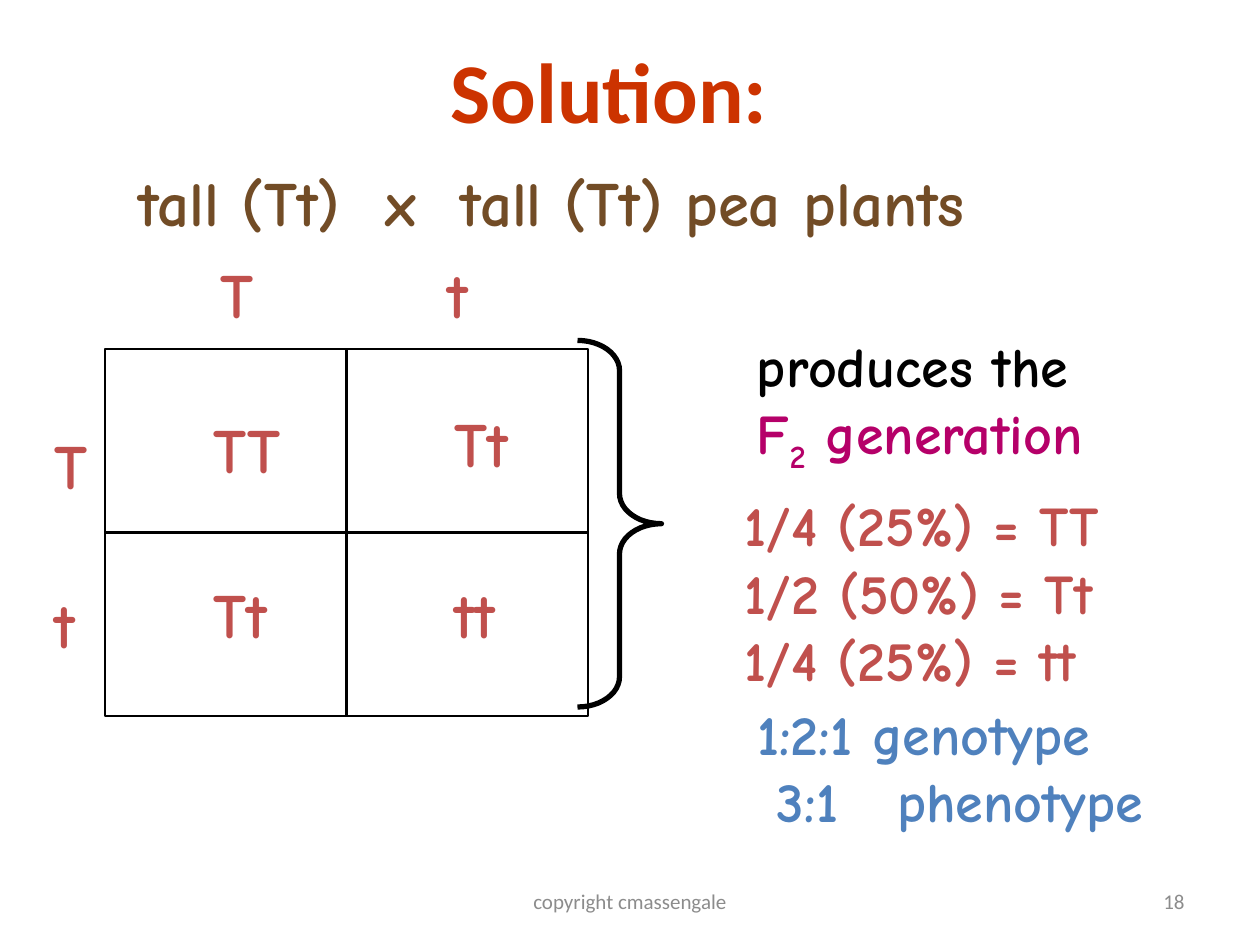
from lxml import etree
from pptx import Presentation
from pptx.dml.color import RGBColor
from pptx.enum.shapes import MSO_CONNECTOR, MSO_SHAPE
from pptx.enum.text import MSO_ANCHOR, PP_ALIGN
from pptx.oxml.ns import qn
from pptx.util import Pt

LEFT, CENTER, RIGHT = PP_ALIGN.LEFT, PP_ALIGN.CENTER, PP_ALIGN.RIGHT
TOP, MIDDLE = MSO_ANCHOR.TOP, MSO_ANCHOR.MIDDLE
STRAIGHT = MSO_CONNECTOR.STRAIGHT

BLACK = RGBColor(0x00, 0x00, 0x00)
GRAY = RGBColor(0x8C, 0x8C, 0x8C)
ORANGE = RGBColor(0xCC, 0x33, 0x00)
BROWN = RGBColor(0x72, 0x4C, 0x26)
RED = RGBColor(0xC0, 0x50, 0x4D)
MAGENTA = RGBColor(0xB5, 0x00, 0x69)
BLUE = RGBColor(0x4F, 0x81, 0xBD)

TITLE = {"name": "Calibri", "size": Pt(48.6), "bold": True}
FOOTER = {"name": "Calibri", "size": Pt(12), "bold": False}
GENE = {"name": "Comic Neue", "size": Pt(36), "bold": True}
RESULT = {"name": "Comic Neue", "size": Pt(32), "bold": True}

# Left, top, width, height of the Punnett square and the brace beside it
SQUARE = (60, 199.5, 276, 209.5)
BRACE = (330, 194.5, 48, 209.5)
PHENOTYPE_TAB = 80

# Text, left, top, width of each allele and offspring label
LABELS = [
    ("TT", 115, 231, 64), ("Tt", 115, 325.5, 56),
    ("Tt", 252.5, 227.5, 56), ("tt", 252.5, 325.5, 48),
    ("T", 24, 240, 39.5), ("t", 24, 331, 31),
    ("T", 119, 142.5, 39.5), ("t", 248.5, 142.5, 31),
]
LABEL_HEIGHT = 50.5

# Box and lines; a line is a list of (text, colour, baseline) runs
RESULTS = [
    ((425.5, 186, 221, 83.5), [
        [("produces the", BLACK, 0)],
        [("F", MAGENTA, 0), ("2", MAGENTA, -25000),
         (" generation", MAGENTA, 0)]]),
    ((418.5, 277, 264, 122.5), [
        [("1/4 (25%) = TT", RED, 0)],
        [("1/2 (50%) = Tt", RED, 0)],
        [("1/4 (25%) = tt", RED, 0)]]),
    ((425.5, 396, 278, 83.5), [
        [("1:2:1 genotype", BLUE, 0)],
        [(" 3:1\tphenotype", BLUE, 0)]]),
]

# Text, box, format, colour, alignment, anchor
HEADINGS = [
    ("Solution:", (0, 30, 696, 42), TITLE, ORANGE, CENTER, MIDDLE),
    ("tall (Tt)  x  tall (Tt) pea plants", (72, 90, 576, 50.5), GENE, BROWN,
     LEFT, TOP),
    ("copyright cmassengale", (246, 500.5, 228, 28.5), FOOTER, GRAY, CENTER,
     MIDDLE),
    ("18", (516, 500.5, 168, 28.5), FOOTER, GRAY, RIGHT, MIDDLE),
]


def add_text(s, box, lines, fmt, align=LEFT, anchor=TOP, wrap=False):
    tf = s.shapes.add_textbox(*map(Pt, box)).text_frame
    tf.word_wrap = wrap
    tf.vertical_anchor = anchor
    for i, runs in enumerate(lines):
        p = tf.paragraphs[0] if i == 0 else tf.add_paragraph()
        p.alignment = align
        for text, color, baseline in runs:
            r = p.add_run()
            r.text = text
            for key, value in fmt.items():
                setattr(r.font, key, value)
            r.font.color.rgb = color
            if baseline:
                r.font._element.set("baseline", str(baseline))
    return tf


def add_outline(s, kind, box, width):
    sp = s.shapes.add_shape(kind, *map(Pt, box))
    sp.shadow.inherit = False
    sp.fill.background()
    sp.line.color.rgb = BLACK
    sp.line.width = Pt(width)
    return sp


def add_divider(s, rect, begin, end):
    """Join two sides of the rectangle by their connection sites."""
    line = s.shapes.add_connector(STRAIGHT, 0, 0, 0, 0)
    line.begin_connect(rect, begin)
    line.end_connect(rect, end)
    line.line.color.rgb = BLACK
    line.line.width = Pt(2)
    etree.SubElement(line._element.spPr, qn("a:effectLst"))


def add_tab_stop(p, position):
    tabs = etree.SubElement(p._p.get_or_add_pPr(), qn("a:tabLst"))
    etree.SubElement(tabs, qn("a:tab"), pos=str(Pt(position)), algn="l")


def main():
    prs = Presentation()
    prs.slide_width, prs.slide_height = Pt(720), Pt(540)
    s = prs.slides.add_slide(prs.slide_layouts[6])

    for text, box, fmt, color, align, anchor in HEADINGS:
        add_text(s, box, [[(text, color, 0)]], fmt, align, anchor, wrap=True)

    square = add_outline(s, MSO_SHAPE.RECTANGLE, SQUARE, 1)
    add_divider(s, square, 3, 1)
    add_divider(s, square, 2, 0)
    for text, left, top, width in LABELS:
        add_text(s, (left, top, width, LABEL_HEIGHT), [[(text, RED, 0)]], GENE)

    for box, lines in RESULTS:
        tf = add_text(s, box, lines, RESULT)
    add_tab_stop(tf.paragraphs[-1], PHENOTYPE_TAB)
    brace = add_outline(s, MSO_SHAPE.RIGHT_BRACE, BRACE, 3)
    brace.adjustments[0] = 0.36
    brace.adjustments[1] = 0.5

    prs.save("out.pptx")


if __name__ == "__main__":
    main()
